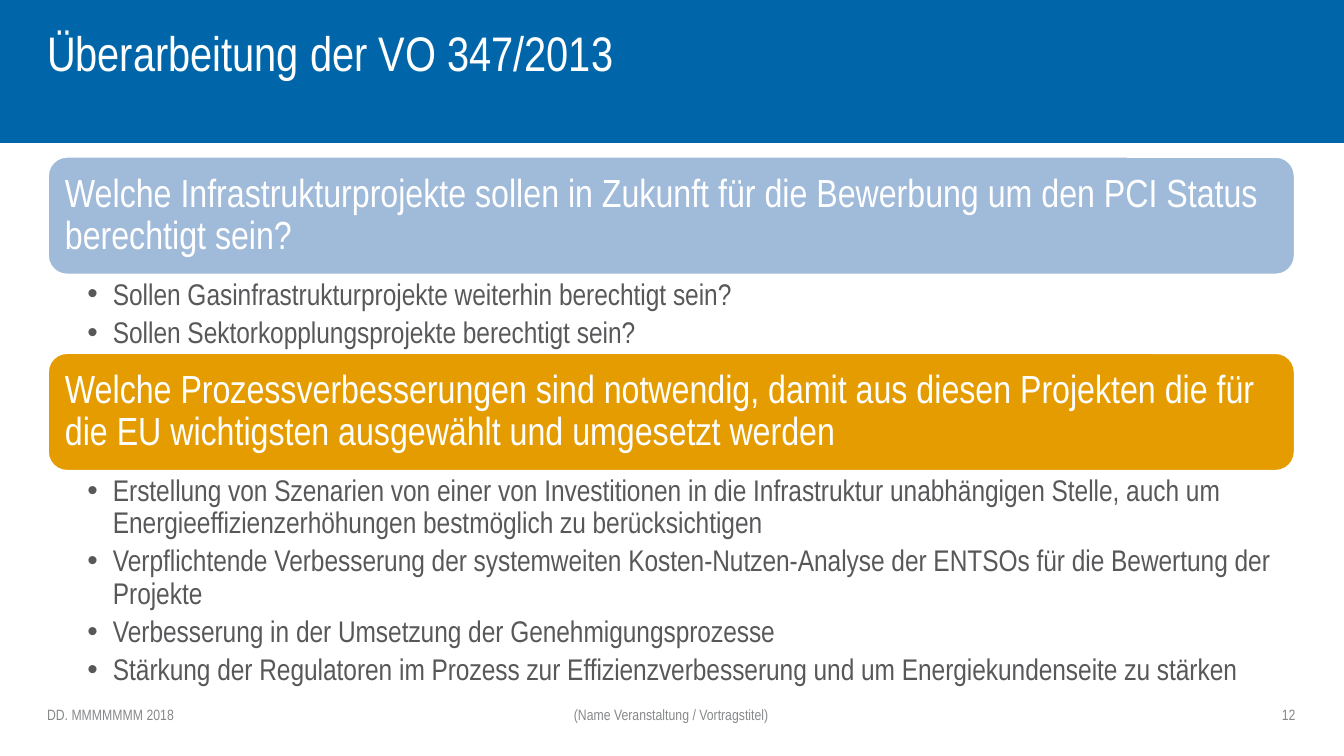
from lxml.etree import SubElement
from pptx import Presentation
from pptx.dml.color import RGBColor
from pptx.enum.shapes import MSO_SHAPE as Shape
from pptx.enum.text import MSO_ANCHOR as Anchor, PP_ALIGN as Align
from pptx.oxml.ns import qn
from pptx.util import Inches, Pt

BLUE = RGBColor(0x00, 0x66, 0xA9)
LIGHT_BLUE = RGBColor(0xA0, 0xBA, 0xDA)
ORANGE = RGBColor(0xE4, 0x9C, 0x00)
WHITE = RGBColor(0xFF, 0xFF, 0xFF)
DARK_GREY = RGBColor(0x58, 0x58, 0x5A)
GREY = RGBColor(0x87, 0x88, 0x8A)
FONT = "Arial Narrow"

TITLE = "Überarbeitung der VO 347/2013"
# heading, heading colour, height of the list, list items
SECTIONS = [
    ("Welche Infrastrukturprojekte sollen in Zukunft für die Bewerbung um den "
     "PCI Status berechtigt sein?", LIGHT_BLUE, 0.57, [
         "Sollen Gasinfrastrukturprojekte weiterhin berechtigt sein?",
         "Sollen Sektorkopplungsprojekte berechtigt sein?",
     ]),
    ("Welche Prozessverbesserungen sind notwendig, damit aus diesen Projekten "
     "die für die EU wichtigsten ausgewählt und umgesetzt werden", ORANGE, 1.62, [
         "Erstellung von Szenarien von einer von Investitionen in die Infrastruktur "
         "unabhängigen Stelle, auch um Energieeffizienzerhöhungen bestmöglich zu "
         "berücksichtigen",
         "Verpflichtende Verbesserung der systemweiten Kosten-Nutzen-Analyse der "
         "ENTSOs für die Bewertung der Projekte",
         "Verbesserung in der Umsetzung der Genehmigungsprozesse",
         "Stärkung der Regulatoren im Prozess zur Effizienzverbesserung und um "
         "Energiekundenseite zu stärken",
     ]),
]
# text, left, width, alignment
FOOTERS = [
    ("DD. MMMMMMM 2018", 0.35, 1.18, Align.LEFT),
    ("(Name Veranstaltung / Vortragstitel)", 2.24, 5.51, Align.CENTER),
    ("12", 8.46, 1.18, Align.RIGHT),
]

LEFT, WIDTH = 0.35, 9.29
SECTIONS_TOP, HEADING_HEIGHT = 1.16, 0.89
BULLET_INDENT = 0.19


def set_all(target, values):
    for name, value in values.items():
        setattr(target, name, value)


def add_bullet(para):
    properties = para._p.get_or_add_pPr()
    properties.set("marL", str(Inches(BULLET_INDENT)))
    properties.set("indent", str(-Inches(BULLET_INDENT)))
    SubElement(properties, qn("a:buFont")).set("typeface", "Arial")
    SubElement(properties, qn("a:buChar")).set("char", "•")


def write(box, lines, size, color, insets, anchor=Anchor.MIDDLE, bullets=False, **layout):
    """Fill a box with one paragraph per line; insets are left, top, right, bottom."""
    frame = box.text_frame
    sides = ("margin_left", "margin_top", "margin_right", "margin_bottom")
    set_all(frame, {"word_wrap": True, "vertical_anchor": anchor})
    set_all(frame, dict(zip(sides, map(Inches, insets))))
    frame.text = "\n".join(lines)
    for para in frame.paragraphs:
        if bullets:
            add_bullet(para)
        set_all(para, {"alignment": Align.LEFT, **layout})
        for span in para.runs:
            set_all(span.font, {"name": FONT, "size": Pt(size)})
            span.font.color.rgb = color


def add_panel(page, kind, place, fill, line, line_width):
    panel = page.shapes.add_shape(kind, *map(Inches, place))
    panel.shadow.inherit = False
    panel.fill.solid()
    panel.fill.fore_color.rgb = fill
    panel.line.color.rgb = line
    panel.line.width = Pt(line_width)
    return panel


def add_text(page, place, *args, **kwargs):
    write(page.shapes.add_textbox(*map(Inches, place)), *args, **kwargs)


def add_header(page):
    band = add_panel(page, Shape.RECTANGLE, (0, 0, 10, 1.06), BLUE, BLUE, 1)
    title = page.shapes.title
    title.element.addprevious(band.element)
    place = map(Inches, (LEFT, 0.21, 7.28, 0.39))
    set_all(title, dict(zip(("left", "top", "width", "height"), place)))
    write(title, [TITLE], 26, WHITE, (0, 0, 0, 0.04))


def add_sections(page):
    top = SECTIONS_TOP
    for heading, color, list_height, items in SECTIONS:
        panel = add_panel(page, Shape.ROUNDED_RECTANGLE,
                          (LEFT, top, WIDTH, HEADING_HEIGHT), color, WHITE, 2)
        write(panel, [heading], 21, WHITE, (0.09,) * 4, line_spacing=0.9)
        top += HEADING_HEIGHT
        add_text(page, (LEFT, top, WIDTH, list_height), items, 16, DARK_GREY,
                 (0.3, 0.03, 0.16, 0.03), Anchor.TOP, bullets=True,
                 level=1, line_spacing=0.9, space_after=Pt(3.2))
        top += list_height


def main():
    deck = Presentation()
    deck.slide_width = Inches(10)
    deck.slide_height = deck.slide_width * 9 // 16
    page = deck.slides.add_slide(deck.slide_layouts[5])
    add_header(page)
    add_sections(page)
    for text, left, width, alignment in FOOTERS:
        add_text(page, (left, 5.22, width, 0.2), [text], 8, GREY, (0,) * 4,
                 alignment=alignment)
    deck.save("out.pptx")


if __name__ == "__main__":
    main()
